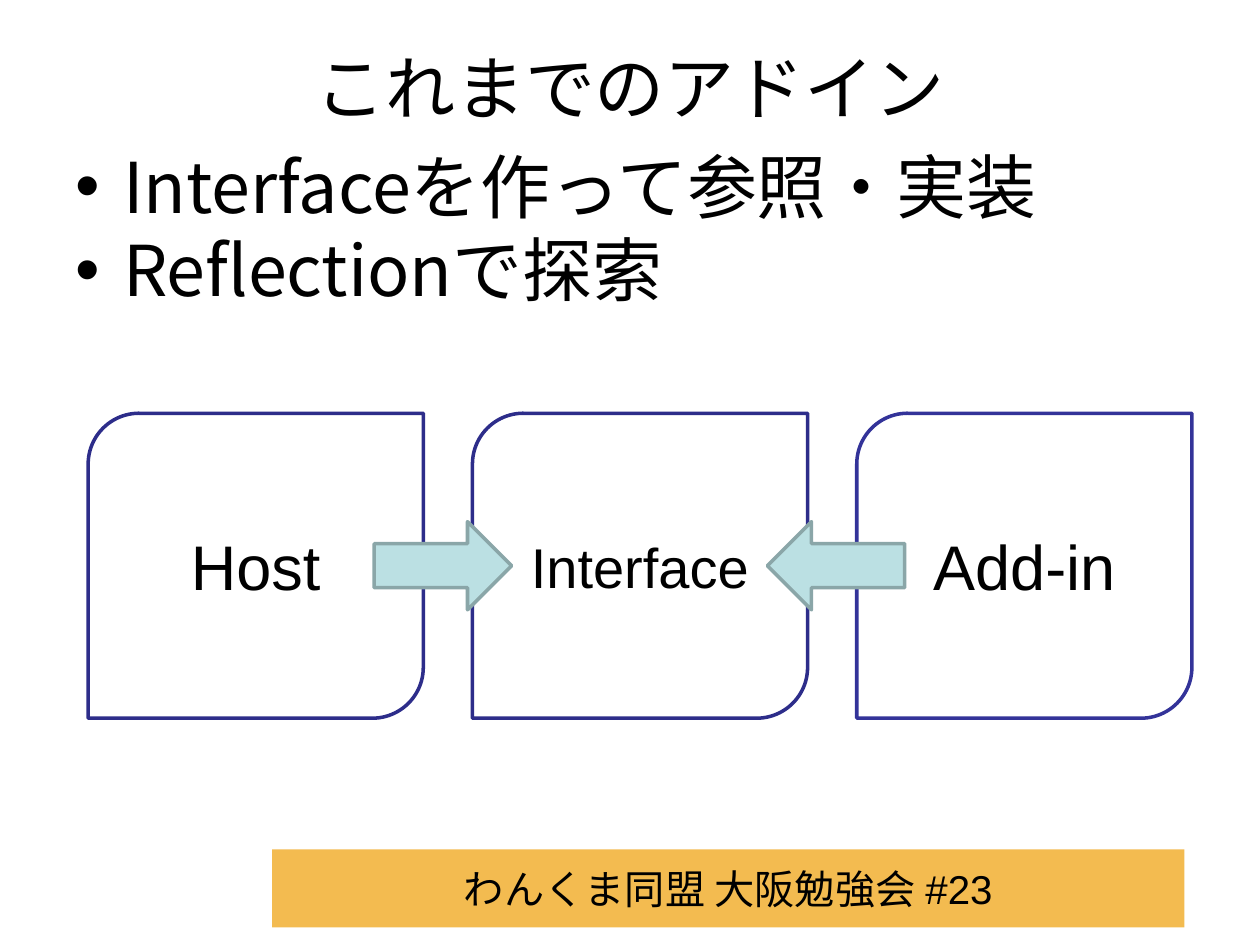
from lxml import etree
from pptx import Presentation
from pptx.dml.color import RGBColor
from pptx.enum.shapes import MSO_SHAPE
from pptx.enum.text import MSO_ANCHOR, PP_ALIGN
from pptx.oxml.ns import qn
from pptx.util import Inches, Pt

RECTANGLE = MSO_SHAPE.RECTANGLE
CARD = MSO_SHAPE.ROUND_2_DIAG_RECTANGLE
RIGHT_ARROW = MSO_SHAPE.RIGHT_ARROW
LEFT_ARROW = MSO_SHAPE.LEFT_ARROW
MIDDLE = MSO_ANCHOR.MIDDLE
CENTER = PP_ALIGN.CENTER

BLACK = RGBColor(0x00, 0x00, 0x00)
WHITE = RGBColor(0xFF, 0xFF, 0xFF)
NAVY = RGBColor(0x2D, 0x2D, 0x8A)
INDIGO = RGBColor(0x33, 0x33, 0x99)
ORANGE = RGBColor(0xF3, 0xBB, 0x50)
PALE_TEAL = RGBColor(0xBB, 0xE0, 0xE3)
GREY_TEAL = RGBColor(0x8A, 0xA6, 0xA8)

LATIN = "Arial"
JAPANESE = "Noto Sans CJK JP"


def add_run(para, text, size, font=LATIN):
    span = para.add_run()
    span.text = text
    span.font.size = Pt(size)
    span.font.name = font
    span.font.color.rgb = BLACK
    east_asian = etree.SubElement(span.font._element, qn("a:ea"))
    east_asian.set("typeface", JAPANESE)


def add_centered_text(box, text, size, font=LATIN):
    frame = box.text_frame
    frame.word_wrap = True
    frame.vertical_anchor = MIDDLE
    para = frame.paragraphs[0]
    para.alignment = CENTER
    add_run(para, text, size, font)


def add_block(page, kind, left, top, width, height, fill, line=None):
    box = page.shapes.add_shape(
        kind, Inches(left), Inches(top), Inches(width), Inches(height))
    box.shadow.inherit = False
    box.fill.solid()
    box.fill.fore_color.rgb = fill
    if line is None:
        box.line.fill.background()
    else:
        box.line.color.rgb = line
        box.line.width = Pt(2)
    return box


def add_text_box(page, left, top, width, height):
    box = page.shapes.add_textbox(
        Inches(left), Inches(top), Inches(width), Inches(height))
    box.text_frame.word_wrap = True
    return box


def add_footer(page, left, top, width, height):
    banner = add_block(page, RECTANGLE, left, top, width, height, ORANGE)
    add_centered_text(banner, "わんくま同盟 大阪勉強会 #23", 23)


def add_title(page, left, top, width, height):
    box = add_text_box(page, left, top, width, height)
    add_centered_text(box, "これまでのアドイン", 40, JAPANESE)


def add_bullets(page, left, top, width, height, lines):
    frame = add_text_box(page, left, top, width, height).text_frame
    frame.margin_top = Inches(0.1)
    for index, text in enumerate(lines):
        para = frame.add_paragraph() if index else frame.paragraphs[0]
        properties = para._p.get_or_add_pPr()
        properties.set("marL", str(Inches(0.38)))
        properties.set("indent", str(-Inches(0.38)))
        etree.SubElement(properties, qn("a:buFont")).set("typeface", LATIN)
        etree.SubElement(properties, qn("a:buChar")).set("char", "•")
        para.line_spacing = 0.83
        if index:
            para.space_before = Pt(8)
        add_run(para, text, 40, JAPANESE)


def add_diagram(page, left, top, width, height):
    card_width = 2.66
    pitch = (width - card_width) / 2
    cards = (("Host", 36, NAVY), ("Interface", 32, NAVY), ("Add-in", 36, INDIGO))
    for index, (label, size, line) in enumerate(cards):
        card = add_block(page, CARD, left + index * pitch, top,
                         card_width, height, WHITE, line)
        add_centered_text(card, label, size)

    arrow_width, arrow_height = 1.09, 0.7
    arrow_top = top + (height - arrow_height) / 2
    for arrow_left, kind in ((2.97, RIGHT_ARROW), (6.09, LEFT_ARROW)):
        add_block(page, kind, arrow_left, arrow_top,
                  arrow_width, arrow_height, PALE_TEAL, GREY_TEAL)


def main():
    deck = Presentation()
    deck.slide_width = Inches(10)
    deck.slide_height = Inches(7.5)
    page = deck.slides.add_slide(deck.slide_layouts[6])
    add_footer(page, 2.16, 6.74, 7.24, 0.62)
    add_title(page, 0.5, 0.3, 9, 0.77)
    add_bullets(page, 0.5, 1.15, 9, 5.55,
                ("Interfaceを作って参照・実装", "Reflectionで探索"))
    add_diagram(page, 0.7, 3.28, 8.76, 2.42)
    deck.save("out.pptx")


if __name__ == "__main__":
    main()
